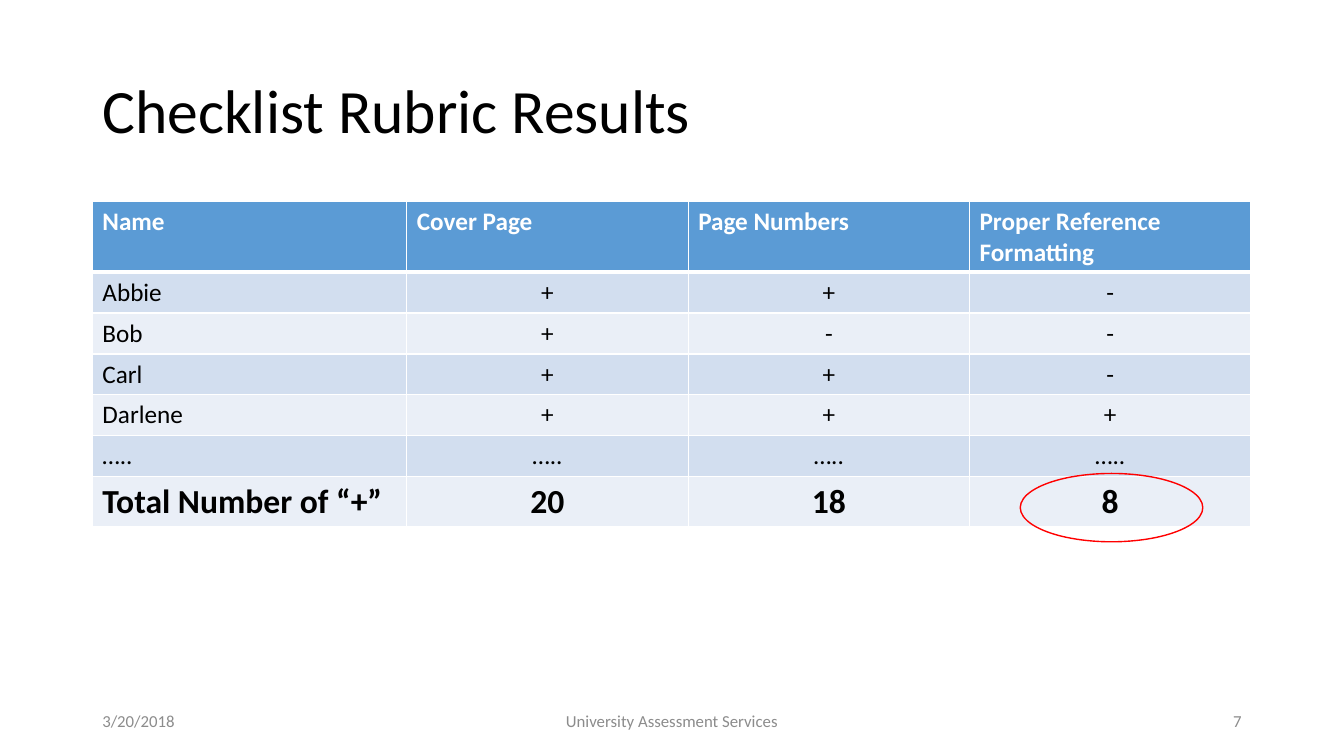
from lxml import etree
from pptx import Presentation
from pptx.dml.color import RGBColor
from pptx.enum.shapes import MSO_SHAPE
from pptx.enum.text import MSO_ANCHOR, PP_ALIGN
from pptx.oxml.ns import qn
from pptx.util import Pt

LEFT, CENTER, RIGHT = PP_ALIGN.LEFT, PP_ALIGN.CENTER, PP_ALIGN.RIGHT
MIDDLE = MSO_ANCHOR.MIDDLE
OVAL = MSO_SHAPE.OVAL

FONT = "Calibri"
BLACK, WHITE, GRAY, RED = "000000", "FFFFFF", "8C8C8C", "FF0000"
HEAD, BANDS = "5B9BD5", ("D2DEEF", "EAEFF7")

MARGIN = 66
WIDTHS = (224.6, 201, 201, 201)
ROW_H = 29.2
ROWS = (
    ("Name", "Cover Page", "Page Numbers", "Proper Reference Formatting"),
    ("Abbie", "+", "+", "-"),
    ("Bob", "+", "-", "-"),
    ("Carl", "+", "+", "-"),
    ("Darlene", "+", "+", "+"),
    ("…..", "…..", "…..", "….."),
    ("Total Number of “+”", "20", "18", "8"),
)
FOOTER = (
    (MARGIN, 216, "3/20/2018", LEFT),
    (318, 324, "University Assessment Services", CENTER),
    (678, 216, "7", RIGHT),
)


def color(code):
    return RGBColor.from_string(code)


def add_run(para, text, size, code, bold=False):
    run = para.add_run()
    run.text = text
    font = run.font
    font.name, font.size, font.bold = FONT, Pt(size), bold
    font.color.rgb = color(code)


def add_text(slide, box, text, size, code, align=LEFT, spacing=1.0):
    frame = slide.shapes.add_textbox(*map(Pt, box)).text_frame
    frame.word_wrap = True
    frame.vertical_anchor = MIDDLE
    para = frame.paragraphs[0]
    para.alignment = align
    para.line_spacing = spacing
    add_run(para, text, size, code)


def add_border(cell, side, width):
    # Borders must precede the fill in the cell properties
    props = cell._tc.get_or_add_tcPr()
    line = etree.SubElement(props, qn(f"a:ln{side}"), w=str(Pt(width)))
    fill = etree.SubElement(line, qn("a:solidFill"))
    etree.SubElement(fill, qn("a:srgbClr"), val=WHITE)


def fill_cell(cell, text, row, col):
    head, total = row == 0, row == len(ROWS) - 1
    for side in "LRTB":
        thick = (head and side == "B") or (row == 1 and side == "T")
        add_border(cell, side, 3 if thick else 1)
    cell.fill.solid()
    cell.fill.fore_color.rgb = color(HEAD if head else BANDS[(row - 1) % 2])
    para = cell.text_frame.paragraphs[0]
    para.alignment = LEFT if head or col == 0 else CENTER
    add_run(para, text, 24 if total else 18,
            WHITE if head else BLACK, head or total)


def add_grid(slide):
    frame = slide.shapes.add_table(
        len(ROWS), len(WIDTHS), Pt(MARGIN), Pt(144),
        Pt(sum(WIDTHS)), Pt(ROW_H * len(ROWS)))
    table = frame.table
    for col, width in enumerate(WIDTHS):
        table.columns[col].width = Pt(width)
    for row, texts in enumerate(ROWS):
        table.rows[row].height = Pt(ROW_H)
        for col, text in enumerate(texts):
            fill_cell(table.cell(row, col), text, row, col)


def add_ring(slide, box):
    ring = slide.shapes.add_shape(OVAL, *map(Pt, box))
    ring.shadow.inherit = False
    ring.fill.background()
    ring.line.color.rgb = color(RED)
    ring.line.width = Pt(1)


def main():
    deck = Presentation()
    deck.slide_width, deck.slide_height = Pt(960), Pt(540)
    slide = deck.slides.add_slide(deck.slide_layouts[6])

    # Title
    add_text(slide, (MARGIN, 28.75, 828, 104.4),
             "Checklist Rubric Results", 44, BLACK, spacing=0.9)

    # Results table
    add_grid(slide)

    # Footer
    for left, width, text, align in FOOTER:
        add_text(slide, (left, 500.5, width, 28.75), text, 12, GRAY, align)

    # Ring around the lowest total
    add_ring(slide, (728.8, 338.2, 130.4, 48.8))

    deck.save("out.pptx")


if __name__ == "__main__":
    main()
